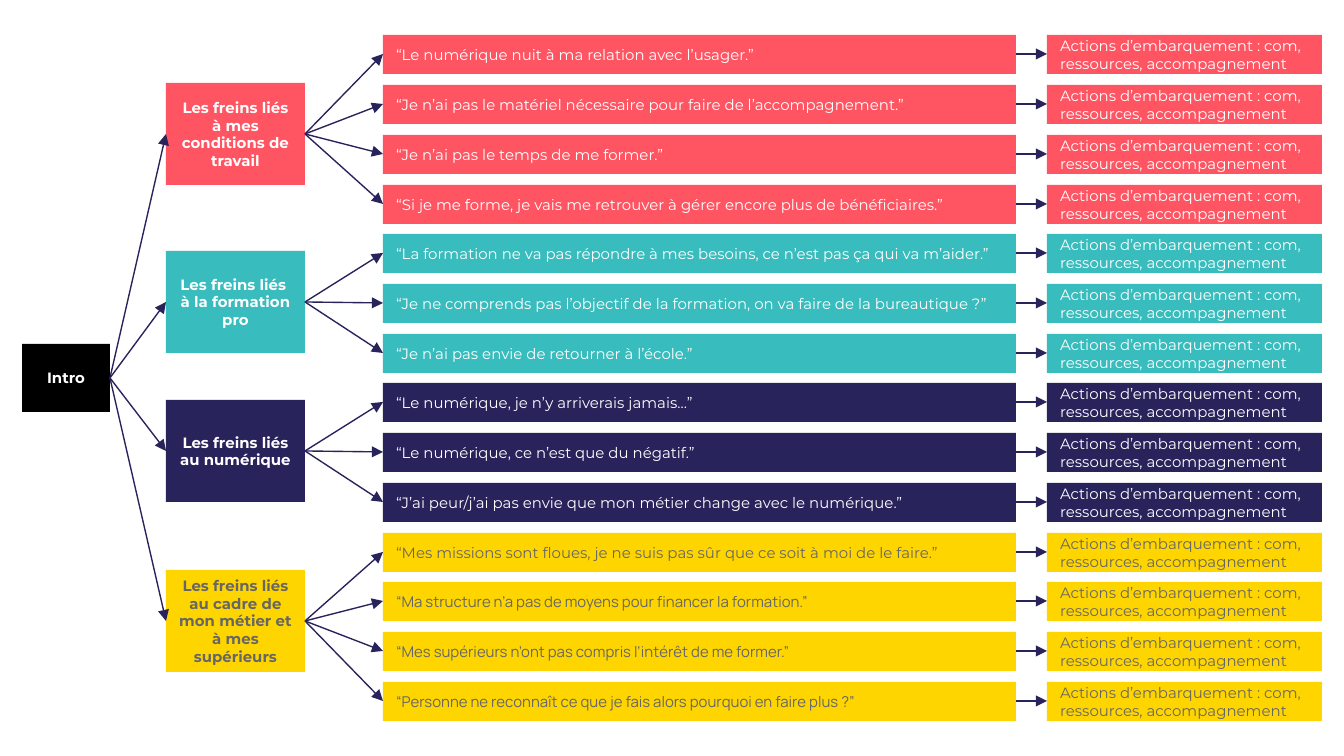
from dataclasses import dataclass

from lxml.etree import SubElement
from pptx import Presentation
from pptx.dml.color import RGBColor
from pptx.enum.shapes import MSO_CONNECTOR, MSO_SHAPE
from pptx.enum.text import MSO_ANCHOR, PP_ALIGN
from pptx.oxml.ns import qn
from pptx.slide import Slide
from pptx.util import Pt

EMU_PER_PX = 914400 / 134.4
COLORS = {
    "black": "000000",
    "white": "FFFFFF",
    "grey": "666666",
    "coral": "FF5563",
    "teal": "39BCBD",
    "navy": "29235C",
    "yellow": "FFD500",
}
ACTION = "Actions d’embarquement : com, ressources, accompagnement"
ROW_PITCH = 50
BAND_SIZES = {35: 4, 234: 3, 383: 4, 582: 3}
ROW_TOPS = [top + ROW_PITCH * row for top, size in BAND_SIZES.items() for row in range(size)]


@dataclass(frozen=True)
class Box:
    left: int
    top: int
    width: int
    height: int

    @property
    def entry(self) -> tuple[int, int]:
        """Middle of the left side."""
        return self.left, self.top + self.height // 2

    @property
    def exit(self) -> tuple[int, int]:
        """Middle of the right side."""
        return self.left + self.width, self.top + self.height // 2


@dataclass(frozen=True)
class Quote:
    text: str
    font: str = "Montserrat"


@dataclass(frozen=True)
class Category:
    title: str
    top: int
    fill: str
    quotes: tuple[Quote, ...]
    ink: str = "white"


CATEGORIES = (
    Category("Les freins liés à mes conditions de travail", 83, "coral", (
        Quote("“Le numérique nuit à ma relation avec l’usager.”"),
        Quote("“Je n’ai pas le matériel nécessaire pour faire de l’accompagnement.”"),
        Quote("“Je n’ai pas le temps de me former.”"),
        Quote("“Si je me forme, je vais me retrouver à gérer encore plus de bénéficiaires.”"),
    )),
    Category("Les freins liés \nà la formation pro", 251, "teal", (
        Quote("“La formation ne va pas répondre à mes besoins, ce n’est pas ça qui va m’aider.”"),
        Quote("“Je ne comprends pas l’objectif de la formation, on va faire de la bureautique ?”"),
        Quote("“Je n’ai pas envie de retourner à l’école.”"),
    )),
    Category("Les freins liés au numérique", 400, "navy", (
        Quote("“Le numérique, je n’y arriverais jamais…”"),
        Quote("“Le numérique, ce n’est que du négatif.”"),
        Quote("“J’ai peur/j’ai pas envie que mon métier change avec le numérique.”"),
    )),
    Category("Les freins liés au cadre de mon métier et à mes supérieurs", 570, "yellow", (
        Quote("“Mes missions sont floues, je ne suis pas sûr que ce soit à moi de le faire.”"),
        Quote("“Ma structure n’a pas de moyens pour financer la formation.”", "Manrope"),
        Quote("“Mes supérieurs n’ont pas compris l’intérêt de me former.”", "Manrope"),
        Quote("“Personne ne reconnaît ce que je fais alors pourquoi en faire plus ?”", "Manrope"),
    ), "grey"),
)


def px(length: int) -> int:
    return round(length * EMU_PER_PX)


def color(name: str) -> RGBColor:
    return RGBColor.from_string(COLORS[name])


def add_box(slide: Slide, box: Box, text: str, fill: str, ink: str,
            font: str = "Montserrat", heading: bool = False) -> None:
    """Draw a filled rectangle; a heading is bold and centred."""
    shape = slide.shapes.add_shape(
        MSO_SHAPE.RECTANGLE, px(box.left), px(box.top), px(box.width), px(box.height))
    shape.shadow.inherit = False
    shape.fill.solid()
    shape.fill.fore_color.rgb = color(fill)
    shape.line.fill.background()

    frame = shape.text_frame
    frame.word_wrap = True
    frame.vertical_anchor = MSO_ANCHOR.MIDDLE
    frame.margin_left = frame.margin_right = frame.margin_top = frame.margin_bottom = px(13)

    paragraph = frame.paragraphs[0]
    paragraph.text = text
    paragraph.alignment = PP_ALIGN.CENTER if heading else PP_ALIGN.LEFT
    paragraph.font.name = font
    paragraph.font.size = Pt(8)
    paragraph.font.bold = heading
    paragraph.font.color.rgb = color(ink)


def add_arrow(slide: Slide, source: Box, target: Box) -> None:
    points = (px(length) for length in (*source.exit, *target.entry))
    connector = slide.shapes.add_connector(MSO_CONNECTOR.STRAIGHT, *points)
    connector.line.color.rgb = color("navy")
    connector.line.width = Pt(0.75)
    SubElement(connector.line._get_or_add_ln(), qn("a:tailEnd"), type="triangle")
    SubElement(connector._element.spPr, qn("a:effectLst"))


def main() -> None:
    presentation = Presentation()
    presentation.slide_width = px(1344)
    presentation.slide_height = px(756)
    slide = presentation.slides.add_slide(presentation.slide_layouts[6])

    intro_box = Box(22, 344, 88, 68)
    add_box(slide, intro_box, "Intro", "black", "white", heading=True)

    row_tops = iter(ROW_TOPS)
    for category in CATEGORIES:
        category_box = Box(166, category.top, 139, 102)
        add_box(slide, category_box, category.title, category.fill, category.ink, heading=True)
        add_arrow(slide, intro_box, category_box)
        for quote in category.quotes:
            top = next(row_tops)
            quote_box = Box(383, top, 633, 39)
            action_box = Box(1047, top, 275, 39)
            add_box(slide, quote_box, quote.text, category.fill, category.ink, quote.font)
            add_box(slide, action_box, ACTION, category.fill, category.ink)
            add_arrow(slide, category_box, quote_box)
            add_arrow(slide, quote_box, action_box)

    presentation.save("out.pptx")


if __name__ == "__main__":
    main()
